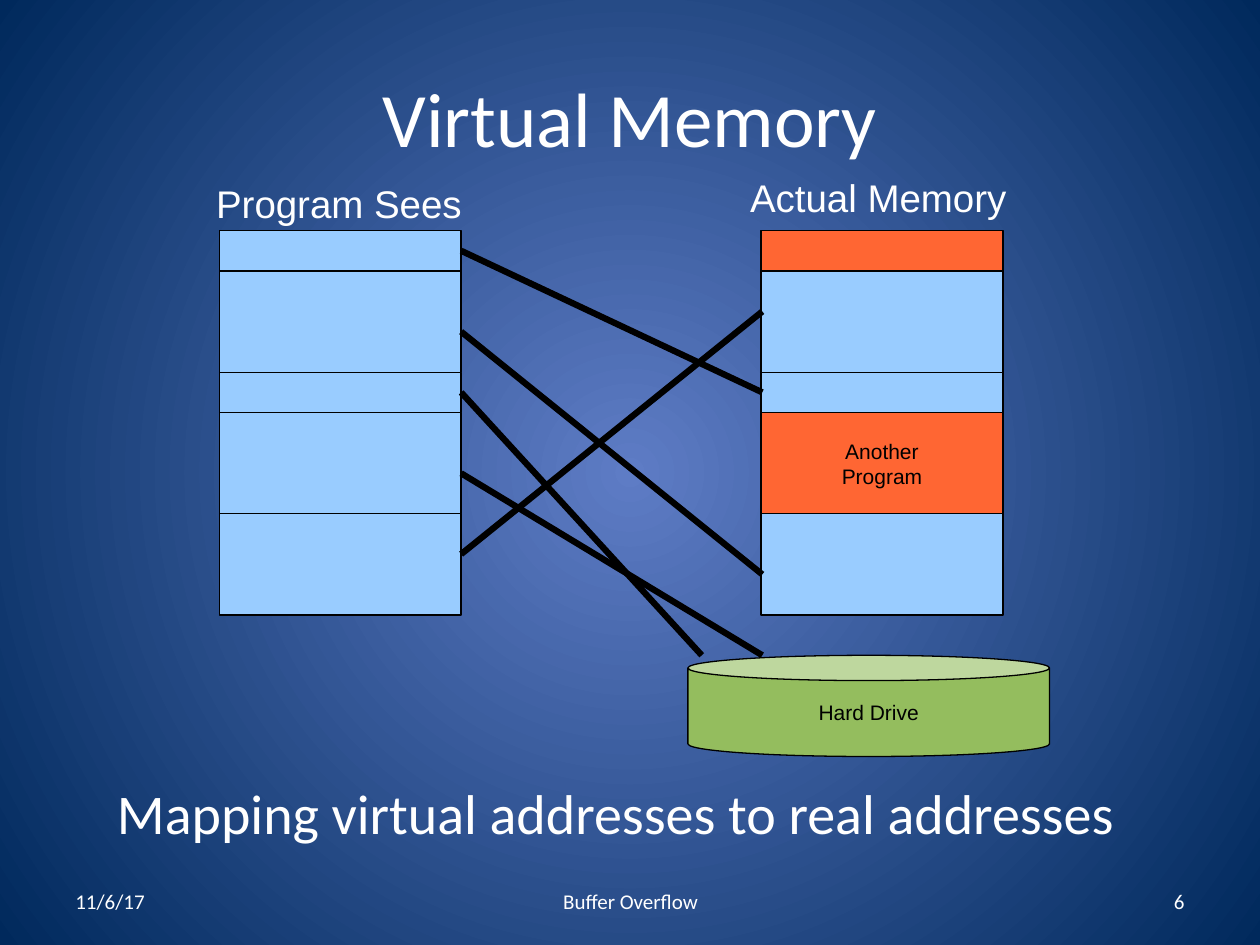
from lxml.etree import SubElement
from pptx import Presentation
from pptx.dml.color import RGBColor
from pptx.enum.shapes import MSO_CONNECTOR, MSO_SHAPE
from pptx.enum.text import MSO_ANCHOR, PP_ALIGN
from pptx.oxml.ns import qn
from pptx.util import Inches, Pt

# Content
TITLE = "Virtual Memory"
CAPTION = "Mapping virtual addresses to real addresses"
FOOTERS = [
    ("11/6/17", 0.5, 2.33, PP_ALIGN.LEFT),
    ("Buffer Overflow", 3.42, 3.17, PP_ALIGN.CENTER),
    ("6", 7.17, 2.33, PP_ALIGN.RIGHT),
]
WHITE, BLACK, OWN, OTHER, DRIVE = "FFFFFF", "000000", "99CCFF", "FF6633", "94BD5E"
# Each memory column: heading, heading box, left edge, (fill, text) per block
COLUMNS = [
    ("Program Sees", (1.58, 1.38, 2.22, 0.5), 1.74, [(OWN, "")] * 5),
    ("Actual Memory", (5.86, 1.33, 2.22, 0.58), 6.04,
     [(OTHER, ""), (OWN, ""), (OWN, ""), (OTHER, "Another\nProgram"), (OWN, "")]),
]

# Grid: memory is 19 rows tall, and blocks span whole rows
MEMORY_TOP, MEMORY_HEIGHT, MEMORY_WIDTH = 1.83, 3.05, 1.92
ROW = MEMORY_HEIGHT / 19
BLOCK_ROWS = [0, 2, 7, 9, 14, 19]
LINE_LEFT, LINE_RIGHT, DRIVE_ROW = 3.66, 6.05, 21
# Mappings: row on the left, end x, row on the right
MAPPINGS = [
    (16, LINE_RIGHT, 4),
    (1, LINE_RIGHT, 8),
    (5, LINE_RIGHT, 17),
    (8, 5.57, DRIVE_ROW),
    (12, LINE_RIGHT, DRIVE_ROW),
]


def color(value):
    return RGBColor.from_string(value)


def row_y(row):
    return MEMORY_TOP + row * ROW


def inches(*values):
    return [Inches(value) for value in values]


def write(shape, text, size, font="Calibri", fill=WHITE, align=PP_ALIGN.LEFT,
          anchor=MSO_ANCHOR.MIDDLE, wrap=True, side_margin=0.1):
    frame = shape.text_frame
    frame.text = text
    frame.word_wrap = wrap
    frame.vertical_anchor = anchor
    frame.margin_left = frame.margin_right = Inches(side_margin)
    for paragraph in frame.paragraphs:
        paragraph.alignment = align
        paragraph.font.size = Pt(size)
        paragraph.font.name = font
        paragraph.font.color.rgb = color(fill)


def add_text(slide, box, text, size, **style):
    write(slide.shapes.add_textbox(*inches(*box)), text, size, **style)


def add_block(slide, kind, box, fill, text):
    shape = slide.shapes.add_shape(kind, *inches(*box))
    shape.shadow.inherit = False
    shape.fill.solid()
    shape.fill.fore_color.rgb = color(fill)
    shape.line.color.rgb = color(BLACK)
    shape.line.width = Pt(0.75)
    if text:
        write(shape, text, 12, font="Arial", fill=BLACK,
              align=PP_ALIGN.CENTER, wrap=False)
    return shape


def add_mapping(slide, start, end):
    line = slide.shapes.add_connector(
        MSO_CONNECTOR.STRAIGHT, *inches(*start, *end))
    line.line.color.rgb = color(BLACK)
    line.line.width = Pt(3.6)
    SubElement(line.element.spPr, qn("a:effectLst"))


def set_background(slide, center, edge):
    fill = slide.background.fill
    fill.gradient()
    for stop, value, position in zip(fill.gradient_stops, (center, edge), (0, 1)):
        stop.color.rgb = color(value)
        stop.position = position
    # Turn the linear gradient into a circular one
    linear = next(slide.element.iter(qn("a:lin")))
    gradient = linear.getparent()
    circle = gradient.makeelement(qn("a:path"), {"path": "circle"})
    gradient.replace(linear, circle)
    SubElement(circle, qn("a:fillToRect"), {side: "50000" for side in "ltrb"})


def main():
    presentation = Presentation()
    presentation.slide_width, presentation.slide_height = inches(10, 7.5)
    slide = presentation.slides.add_slide(presentation.slide_layouts[5])
    set_background(slide, "5E7CC5", "00295C")

    # Title, caption and footers
    title = slide.shapes.title
    title.left, title.top, title.width, title.height = inches(0.5, 0.3, 9, 1.25)
    write(title, TITLE, 44, align=PP_ALIGN.CENTER)
    add_text(slide, (0.83, 6.13, 8.67, 0.62), CAPTION, 32, anchor=MSO_ANCHOR.TOP)
    for text, left, width, align in FOOTERS:
        add_text(slide, (left, 6.95, width, 0.4), text, 12, align=align)

    # Memory columns; headings use the full width of their boxes
    for heading, heading_box, left, blocks in COLUMNS:
        for (fill, text), first, last in zip(blocks, BLOCK_ROWS, BLOCK_ROWS[1:]):
            box = (left, row_y(first), MEMORY_WIDTH, (last - first) * ROW)
            add_block(slide, MSO_SHAPE.RECTANGLE, box, fill, text)
        add_text(slide, heading_box, heading, 22, font="Arial", align=PP_ALIGN.CENTER,
                 anchor=MSO_ANCHOR.TOP, wrap=False, side_margin=0)

    # Hard drive and mapping lines
    drive = add_block(slide, MSO_SHAPE.CAN, (5.46, row_y(DRIVE_ROW), 2.87, 5 * ROW),
                      DRIVE, "Hard Drive")
    drive.adjustments[0] = 0.25
    for start_row, end_x, end_row in MAPPINGS:
        add_mapping(slide, (LINE_LEFT, row_y(start_row)), (end_x, row_y(end_row)))

    presentation.save("out.pptx")


if __name__ == "__main__":
    main()
